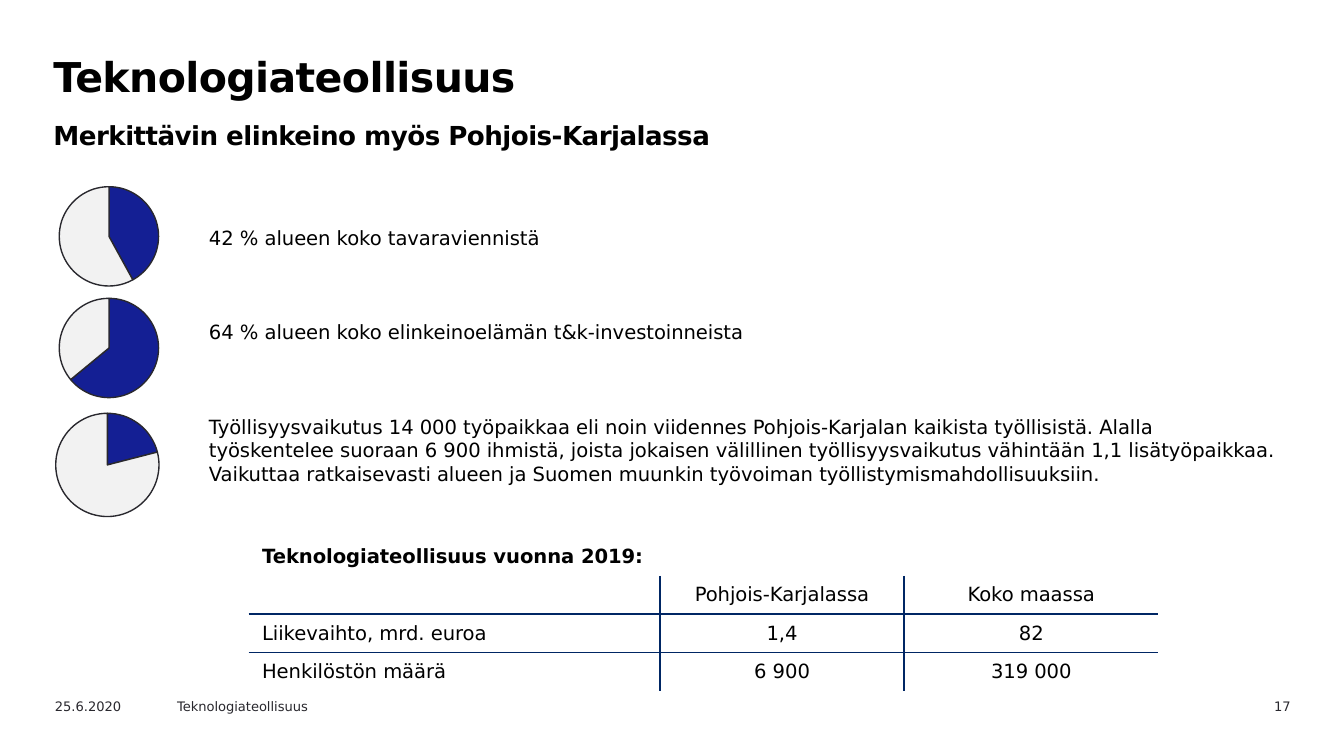
from dataclasses import dataclass

import pptx
import pptx.chart.data
import pptx.dml.color
import pptx.enum.chart
import pptx.enum.text
import pptx.oxml
import pptx.oxml.ns
import pptx.util
from lxml import etree
from pptx.util import Cm, Pt

ALIGN = pptx.enum.text.PP_ALIGN
ANCHOR = pptx.enum.text.MSO_ANCHOR
qn = pptx.oxml.ns.qn


@dataclass(frozen=True)
class Theme:
    font: str = "DejaVu Sans"
    black: str = "000000"
    grey: str = "29282E"
    share: str = "141F94"
    rest: str = "F2F2F2"
    rule: str = "002664"
    title: float = 22
    subtitle: float = 14
    body: float = 10.5
    footer: float = 7
    chart: float = 18


THEME = Theme()
NO_TABLE_STYLE = "{2D5ABB26-0587-4C30-8999-92F81FD0307C}"

SHARES = [
    (42, (0.79, 3.2, 2.54, 2.54)),
    (64, (0.79, 5.31, 2.54, 2.54)),
    (21, (0.71, 7.47, 2.64, 2.64)),
]
FACTS = [
    "42 % alueen koko tavaraviennistä",
    "64 % alueen koko elinkeinoelämän t&k-investoinneista",
    "Työllisyysvaikutus 14 000 työpaikkaa eli noin viidennes Pohjois-Karjalan "
    "kaikista työllisistä. Alalla työskentelee suoraan 6 900 ihmistä, joista "
    "jokaisen välillinen työllisyysvaikutus vähintään 1,1 lisätyöpaikkaa. "
    "Vaikuttaa ratkaisevasti alueen ja Suomen muunkin työvoiman "
    "työllistymismahdollisuuksiin.",
]
FIGURES = [
    ["Teknologiateollisuus vuonna 2019:", "", ""],
    ["", "Pohjois-Karjalassa", "Koko maassa"],
    ["Liikevaihto, mrd. euroa", "1,4", "82"],
    ["Henkilöstön määrä", "6 900", "319 000"],
]
FOOTERS = [
    ("25.6.2020", (0.79, 13.13, 2.54, 0.46), ALIGN.LEFT),
    ("Teknologiateollisuus", (3.1, 13.13, 3.61, 0.46), ALIGN.LEFT),
    ("17", (22.25, 13.13, 2.39, 0.46), ALIGN.RIGHT),
]


def rgb(color):
    return pptx.dml.color.RGBColor.from_string(color)


def style_font(font, size, color, bold=False):
    font.name = THEME.font
    font.size = Pt(size)
    font.bold = bold
    font.color.rgb = rgb(color)


def add_run(paragraph, text, size, color=THEME.black, bold=False):
    run = paragraph.add_run()
    run.text = text
    style_font(run.font, size, color, bold)
    return run


def add_frame(slide, box, anchor=ANCHOR.TOP):
    frame = slide.shapes.add_textbox(*map(Cm, box)).text_frame
    frame.word_wrap = True
    frame.vertical_anchor = anchor
    return frame


def add_heading(slide, box):
    frame = add_frame(slide, box)
    frame.margin_top = Cm(0.16)
    paragraph = frame.paragraphs[0]
    paragraph.line_spacing = Pt(27)
    paragraph._p.get_or_add_pPr().set("marL", str(Cm(0.05)))
    title = add_run(paragraph, "Teknologiateollisuus", THEME.title, bold=True)
    paragraph.add_line_break()
    subtitle = add_run(paragraph, "Merkittävin elinkeino myös Pohjois-Karjalassa",
                       THEME.subtitle, bold=True)
    for run in (title, subtitle):
        run._r.get_or_add_rPr().set("spc", "-30")


def add_facts(slide, box):
    frame = add_frame(slide, box)
    for index, fact in enumerate(FACTS):
        paragraph = frame.add_paragraph() if index else frame.paragraphs[0]
        if index:
            paragraph.space_before = Pt(38)
        add_run(paragraph, fact, THEME.body)


def add_footer(slide, text, box, align):
    frame = add_frame(slide, box, ANCHOR.MIDDLE)
    frame.margin_top = frame.margin_bottom = 0
    paragraph = frame.paragraphs[0]
    paragraph.alignment = align
    add_run(paragraph, text, THEME.footer, THEME.grey)


def set_pie_area(chart, margin):
    """Centre the pie, leaving the given share of the chart free on each side."""
    area = chart._chartSpace.chart.plotArea
    for old in area.findall(qn("c:layout")):
        area.remove(old)
    layout = etree.Element(qn("c:layout"))
    manual = etree.SubElement(layout, qn("c:manualLayout"))
    size = round(1 - 2 * margin, 2)
    for tag, value in (("layoutTarget", "inner"), ("xMode", "edge"),
                       ("yMode", "edge"), ("x", margin), ("y", margin),
                       ("w", size), ("h", size)):
        etree.SubElement(manual, qn(f"c:{tag}")).set("val", str(value))
    area.insert(0, layout)


def add_share_pie(slide, percent, box):
    data = pptx.chart.data.CategoryChartData()
    data.categories = ["1", "2"]
    data.add_series("Series 1", [percent, 100 - percent])
    chart = slide.shapes.add_chart(
        pptx.enum.chart.XL_CHART_TYPE.PIE, *map(Cm, box), data).chart
    chart.has_legend = False
    chart.has_title = False
    style_font(chart.font, THEME.chart, THEME.grey)
    plot = chart.plots[0]
    plot.vary_by_categories = True
    for index, color in enumerate((THEME.share, THEME.rest)):
        look = plot.series[0].points[index].format
        look.fill.solid()
        look.fill.fore_color.rgb = rgb(color)
        look.line.color.rgb = rgb(THEME.grey)
        look.line.width = Pt(0.75)
    set_pie_area(chart, 0.13)


def add_borders(cell, sides):
    properties = cell._tc.get_or_add_tcPr()
    for side in sides:
        line = etree.SubElement(properties, qn(f"a:ln{side}"), w=str(Pt(1)))
        fill = etree.SubElement(line, qn("a:solidFill"))
        etree.SubElement(fill, qn("a:srgbClr"), val=THEME.rule)


def add_figures(slide, box):
    row_count, column_count = len(FIGURES), len(FIGURES[0])
    table = slide.shapes.add_table(row_count, column_count, *map(Cm, box)).table
    table.first_row = table.horz_banding = False
    table._tbl.tblPr.find(qn("a:tableStyleId")).text = NO_TABLE_STYLE
    for column, width in zip(table.columns, (7.77, 4.62, 4.8)):
        column.width = Cm(width)
    for row in table.rows:
        row.height = Cm(box[3] / row_count)
    table.cell(0, 0).merge(table.cell(0, column_count - 1))
    for r, texts in enumerate(FIGURES):
        for c, text in enumerate(texts):
            cell = table.cell(r, c)
            cell.vertical_anchor = ANCHOR.MIDDLE
            inner = {"L": c > 0, "R": c < column_count - 1,
                     "T": r > 1, "B": r < row_count - 1}
            if r:
                add_borders(cell, [side for side, shown in inner.items() if shown])
            cell.fill.background()
            paragraph = cell.text_frame.paragraphs[0]
            paragraph.alignment = ALIGN.CENTER if c else ALIGN.LEFT
            if text:
                add_run(paragraph, text, THEME.body, bold=r == 0)
            else:
                etree.SubElement(paragraph._p, qn("a:endParaRPr"),
                                 sz=str(Pt(THEME.body).centipoints))


def main():
    deck = pptx.Presentation()
    deck.slide_width, deck.slide_height = Cm(25.4), Cm(14.29)
    slide = deck.slides.add_slide(deck.slide_layouts[6])
    add_heading(slide, (0.71, 0.79, 22.2, 1.8))
    for footer in FOOTERS:
        add_footer(slide, *footer)
    add_facts(slide, (3.7, 4.14, 20.8, 6.15))
    for percent, box in SHARES:
        add_share_pie(slide, percent, box)
    add_figures(slide, (4.7, 10.16, 17.19, 2.9))
    deck.save("out.pptx")


if __name__ == "__main__":
    main()
